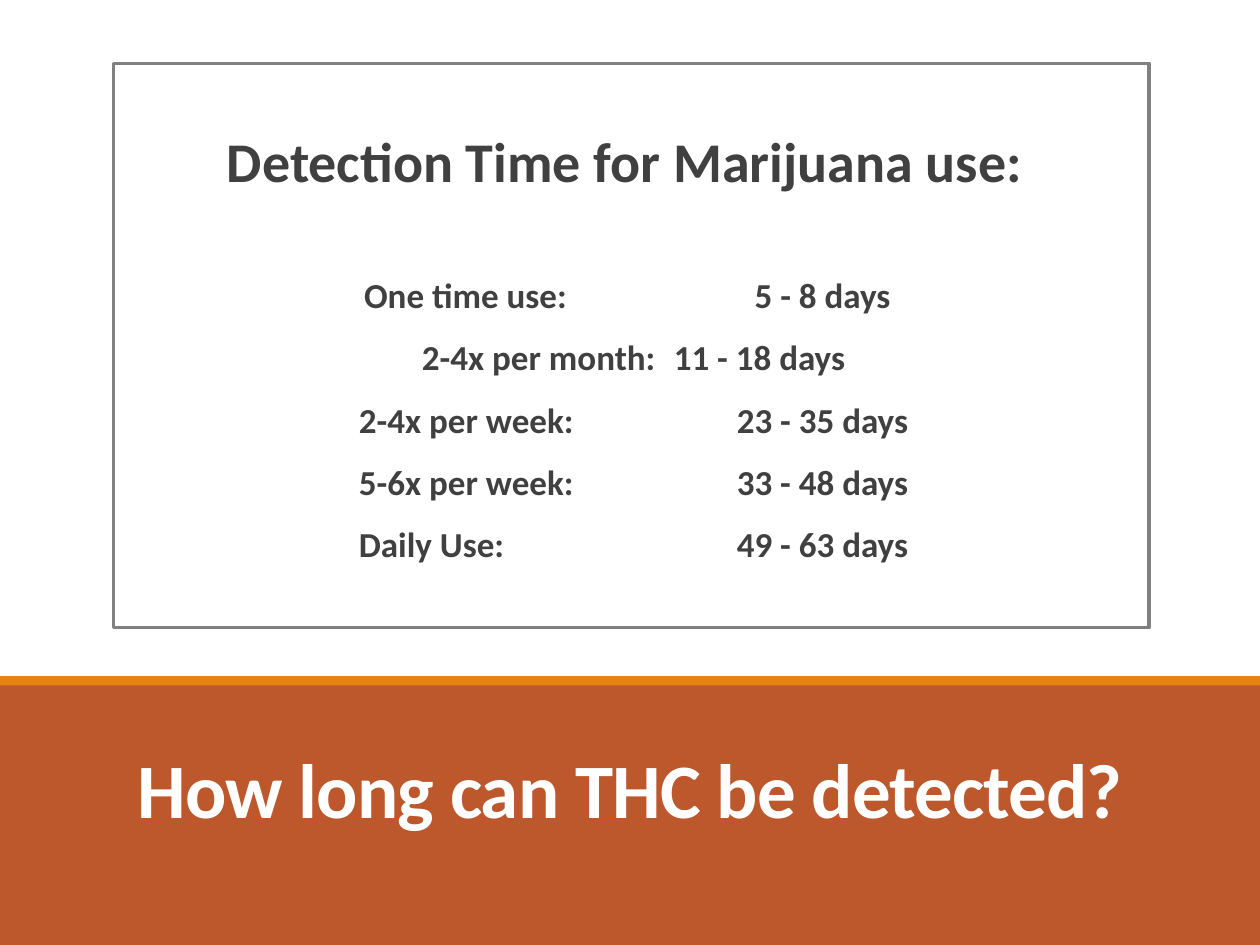
import pptx
import pptx.dml.color
import pptx.enum.shapes
import pptx.enum.text
import pptx.util

COLORS = {"rust": "BD582C", "amber": "E48312", "ink": "404040", "frame": "808080", "white": "FFFFFF"}
WIDTH, HEIGHT = pptx.util.Inches(10), pptx.util.Inches(7.5)
CENTER = pptx.enum.text.PP_ALIGN.CENTER
HEADING = "Detection Time for Marijuana use: "
DETECTION_TIMES = [
    "One time use: \t\t5 - 8 days ",
    "\t2-4x per month: \t11 - 18 days ",
    "\t2-4x per week:\t\t23 - 35 days ",
    "\t5-6x per week:\t\t33 - 48 days ",
    "\tDaily Use:\t \t49 - 63 days ",
]
INDENTS = {"marL": 0.1, "indent": -0.1, "defTabSz": 1}


def color(name):
    """Return the named colour of the palette."""
    return pptx.dml.color.RGBColor.from_string(COLORS[name])


def apply(target, formats):
    """Set each attribute of the target from a dict of values."""
    for name, value in formats.items():
        setattr(target, name, value)


def share(box, left, top, width, height):
    """Return the part of a box given by shares of its size."""
    x, y, w, h = box
    return [round(value) for value in (x + left * w, y + top * h, width * w, height * h)]


def add_rectangle(page, box, fill=None, line=None):
    """Add a flat rectangle with an optional fill and outline."""
    shape = page.shapes.add_shape(pptx.enum.shapes.MSO_SHAPE.RECTANGLE, *box)
    shape.shadow.inherit = False
    for paint, name in ((shape.fill, fill), (shape.line.fill, line)):
        if name:
            paint.solid()
            paint.fore_color.rgb = color(name)
        else:
            paint.background()
    return shape


def write(para, text, size, ink, **spacing):
    """Write one bold centred paragraph and return its run."""
    apply(para, {"alignment": CENTER, **spacing})
    span = para.add_run()
    span.text = text
    apply(span.font, {"name": "Calibri", "size": pptx.util.Pt(size), "bold": True})
    span.font.color.rgb = color(ink)
    return span


def add_times_panel(page, box):
    """Add the framed panel with the heading and detection times."""
    panel = add_rectangle(page, box, line="frame")
    panel.line.width = pptx.util.Pt(2)
    frame = panel.text_frame
    apply(frame, {
        "word_wrap": True, "vertical_anchor": pptx.enum.text.MSO_ANCHOR.TOP,
        "margin_left": 0, "margin_right": 0, "margin_top": round(box[3] * 0.125),
    })
    lines = [(HEADING, 32, 0), (DETECTION_TIMES[0], 20, 46)]
    lines += [(text, 20, 12) for text in DETECTION_TIMES[1:]]
    for index, (text, size, gap) in enumerate(lines):
        para = frame.add_paragraph() if index else frame.paragraphs[0]
        write(para, text, size, "ink", line_spacing=0.9,
              space_before=pptx.util.Pt(gap), space_after=pptx.util.Pt(2))
        properties = para._p.get_or_add_pPr()
        for name, inches in INDENTS.items():
            properties.set(name, str(pptx.util.Inches(inches)))


def add_title_band(page, box):
    """Add the coloured band, its top stripe and the slide title."""
    add_rectangle(page, box, fill="rust")
    add_rectangle(page, share(box, 0, -0.027, 1, 0.035), fill="amber")
    title = page.shapes.title
    apply(title, dict(zip(("left", "top", "width", "height"), share(box, 0.0875, 0.155, 0.825, 0.54))))
    apply(title.text_frame, {"word_wrap": True, "vertical_anchor": pptx.enum.text.MSO_ANCHOR.MIDDLE})
    span = write(title.text_frame.paragraphs[0], "How long can THC be detected?", 44, "white", line_spacing=0.85)
    span._r.get_or_add_rPr().set("spc", "-50")
    page.shapes._spTree.append(title._element)


def main():
    """Build and save the slide."""
    deck = pptx.Presentation()
    apply(deck, {"slide_width": WIDTH, "slide_height": HEIGHT})
    page = deck.slides.add_slide(deck.slide_layouts.get_by_name("Title Only"))
    whole = (0, 0, WIDTH, HEIGHT)
    add_times_panel(page, share(whole, 0.09, 0.067, 0.822, 0.597))
    add_title_band(page, share(whole, 0, 0.723, 1, 0.277))
    deck.save("out.pptx")


if __name__ == "__main__":
    main()
